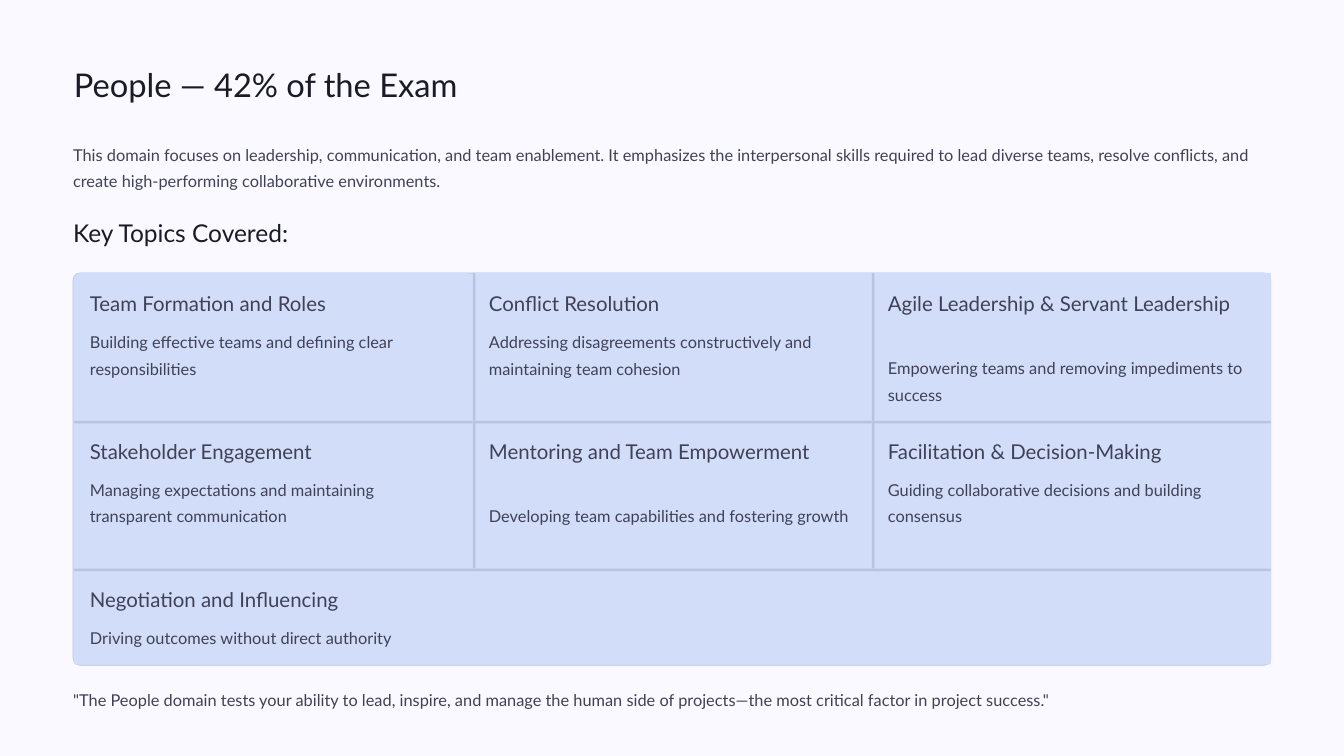
import pptx
import pptx.dml.color
import pptx.enum.shapes
import pptx.util

Inches = pptx.util.Inches
Pt = pptx.util.Pt
SHAPES = pptx.enum.shapes.MSO_SHAPE

BACKGROUND, PANEL, RULE = "F9F9FF", "D2DDF9", "B8C3DF"
TITLE_COLOR, BODY_COLOR = "1B1B27", "404155"

LEFT, WIDTH = 0.87, 14.26
GRID_LEFT, GRID_TOP = 0.88, 3.25
COLUMN_WIDTH, ROW_HEIGHT = 4.75, 1.76
LAST_ROW_HEIGHT = 1.14
RULE_WIDTH, PADDING = 0.03, 0.2

# Heading, heading width, heading lines, description
TOPICS = [
    ("Team Formation and Roles", 3.3, 1,
     "Building effective teams and defining clear responsibilities"),
    ("Conflict Resolution", 2.47, 1,
     "Addressing disagreements constructively and maintaining team cohesion"),
    ("Agile Leadership & Servant Leadership", 4.35, 2,
     "Empowering teams and removing impediments to success"),
    ("Stakeholder Engagement", 3.15, 1,
     "Managing expectations and maintaining transparent communication"),
    ("Mentoring and Team Empowerment", 4.35, 2,
     "Developing team capabilities and fostering growth"),
    ("Facilitation & Decision-Making", 3.72, 1,
     "Guiding collaborative decisions and building consensus"),
    ("Negotiation and Influencing", 3.46, 1,
     "Driving outcomes without direct authority"),
]


def color(value):
    return pptx.dml.color.RGBColor.from_string(value)


class SlideBuilder:
    font = "Lato"

    def __init__(self, slide):
        self.slide = slide
        fill = slide.background.fill
        fill.solid()
        fill.fore_color.rgb = color(BACKGROUND)

    def text(self, text, left, top, width, height, size=14, spacing=22.5,
             text_color=BODY_COLOR, wrap=False):
        box = self.slide.shapes.add_textbox(
            Inches(left), Inches(top), Inches(width), Inches(height))
        frame = box.text_frame
        frame.margin_left = frame.margin_right = 0
        frame.margin_top = frame.margin_bottom = 0
        frame.word_wrap = wrap
        paragraph = frame.paragraphs[0]
        paragraph.line_spacing = Pt(spacing)
        run = paragraph.add_run()
        run.text = text
        run.font.name = self.font
        run.font.size = Pt(size)
        run.font.color.rgb = color(text_color)

    def box(self, left, top, width, height, fill=PANEL, line=None, rounding=None):
        kind = SHAPES.ROUNDED_RECTANGLE if rounding else SHAPES.RECTANGLE
        shape = self.slide.shapes.add_shape(
            kind, Inches(left), Inches(top), Inches(width), Inches(height))
        shape.shadow.inherit = False
        if rounding:
            shape.adjustments[0] = rounding
        shape.fill.solid()
        shape.fill.fore_color.rgb = color(fill)
        if line:
            shape.line.color.rgb = color(line)
            shape.line.width = Pt(0.6)
        else:
            shape.line.fill.background()

    def topic(self, index, heading, heading_width, heading_lines, description):
        """Draw one grid cell with its dividers, heading and description."""
        row, column = divmod(index, 3)
        last = index == len(TOPICS) - 1
        left = GRID_LEFT + column * COLUMN_WIDTH
        top = GRID_TOP + row * ROW_HEIGHT
        width = 3 * COLUMN_WIDTH if last else COLUMN_WIDTH
        height = LAST_ROW_HEIGHT if last else ROW_HEIGHT
        self.box(left, top, width, height, rounding=None if index else 0.047)
        if column:
            self.box(left, top, RULE_WIDTH, height, fill=RULE, rounding=0.5)
        if row:
            self.box(left, top, width, RULE_WIDTH, fill=RULE, rounding=0.5)

        text_left = left + PADDING - 0.01
        heading_height = 0.31 * heading_lines
        self.text(heading, text_left, top + PADDING, heading_width, heading_height,
                  size=17.5, spacing=22, wrap=heading_lines > 1)
        self.text(description, text_left, top + PADDING + heading_height + 0.12,
                  width - 2 * PADDING, 0.32 if last else 0.63, wrap=not last)


def main():
    presentation = pptx.Presentation()
    presentation.slide_width = Inches(16)
    presentation.slide_height = Inches(9)
    builder = SlideBuilder(presentation.slides.add_slide(presentation.slide_layouts[6]))

    builder.text("People — 42% of the Exam", 0.88, 0.74, 7.38, 0.49,
                 size=28, spacing=35.5, text_color=TITLE_COLOR)
    builder.text("This domain focuses on leadership, communication, and team enablement. "
                 "It emphasizes the interpersonal skills required to lead diverse teams, "
                 "resolve conflicts, and create high-performing collaborative environments.",
                 LEFT, 1.65, WIDTH, 0.63, wrap=True)
    builder.text("Key Topics Covered:", LEFT, 2.58, 2.96, 0.37,
                 size=21, spacing=26.5, text_color=TITLE_COLOR)

    builder.box(LEFT, GRID_TOP, WIDTH, 4.67, line=RULE, rounding=0.018)
    for index, topic in enumerate(TOPICS):
        builder.topic(index, *topic)

    builder.text('"The People domain tests your ability to lead, inspire, and manage the '
                 'human side of projects—the most critical factor in project success."',
                 LEFT, 8.14, WIDTH, 0.32)
    presentation.save("out.pptx")


if __name__ == "__main__":
    main()
